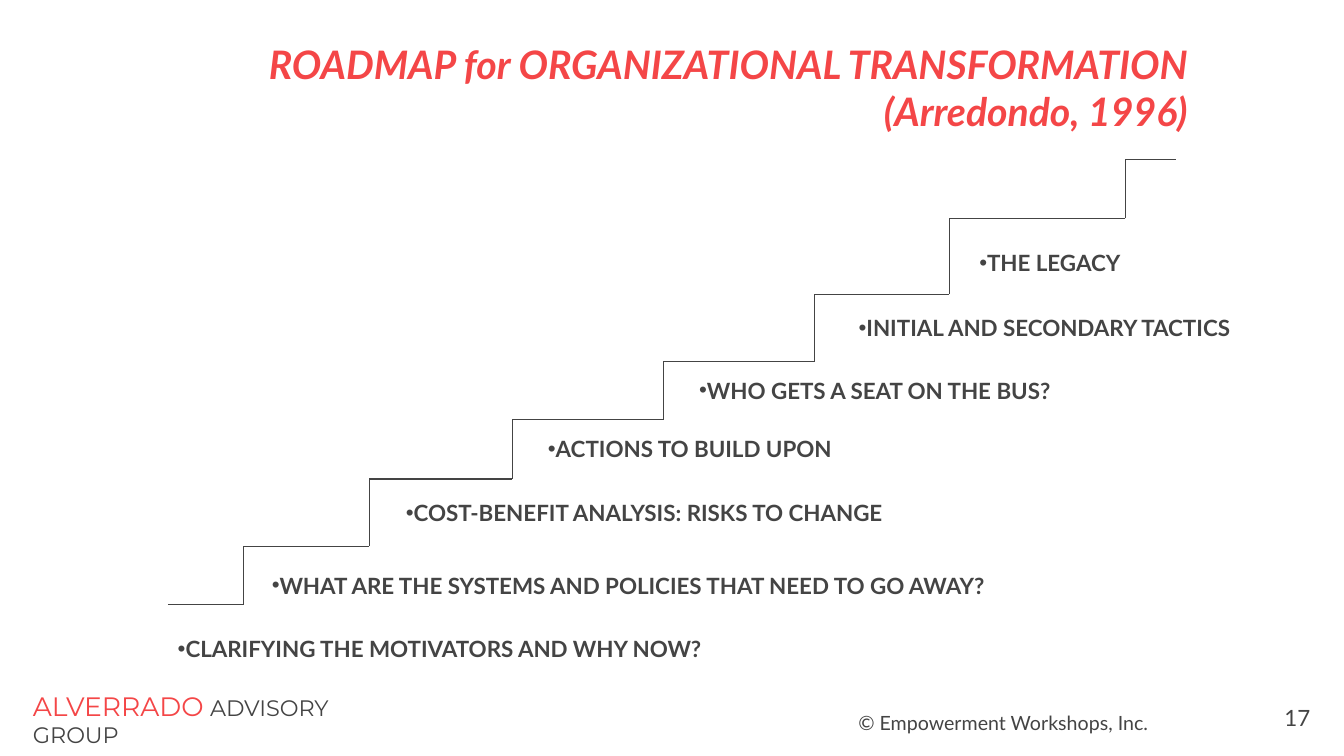
from collections import namedtuple
from dataclasses import dataclass
from itertools import pairwise

from lxml.etree import SubElement
from pptx import Presentation
from pptx.dml.color import RGBColor
from pptx.enum.shapes import MSO_CONNECTOR as Connector
from pptx.enum.text import MSO_ANCHOR as Anchor, MSO_AUTO_SIZE as AutoSize, PP_ALIGN as Align
from pptx.oxml.ns import qn
from pptx.util import Cm, Pt

Box = namedtuple("Box", "left top width height")
Step = namedtuple("Step", "tread rise label label_width offset_x offset_y")


@dataclass(frozen=True)
class Theme:
    red: RGBColor = RGBColor(0xF4, 0x46, 0x47)
    grey: RGBColor = RGBColor(0x44, 0x44, 0x44)
    body_font: str = "Lato"
    brand_font: str = "Montserrat"
    title_size: int = 28
    brand_size: int = 19
    gap_size: int = 18
    label_size: int = 16
    footer_size: int = 14
    line_width: float = 0.75


THEME = Theme()

# From the bottom step up, in centimetres: tread length, rise after it,
# label, label width, label offset from the left end of the tread.
STEPS = [
    Step(1.91, 1.48, "CLARIFYING THE MOTIVATORS AND WHY NOW?", 13.84, 0, 0.64),
    Step(3.17, 1.69, "WHAT ARE THE SYSTEMS AND POLICIES THAT NEED TO GO AWAY?",
         18.75, 0.46, 0.52),
    Step(3.6, 1.49, "COST-BENEFIT ANALYSIS: RISKS TO CHANGE", 12.8, 0.67, 0.38),
    Step(3.81, 1.48, "ACTIONS TO BUILD UPON", 7.87, 0.65, 0.27),
    Step(3.81, 1.69, "WHO GETS A SEAT ON THE BUS?", 9.53, 0.65, 0.27),
    Step(3.39, 1.91, "INITIAL AND SECONDARY TACTICS", 10.08, 0.86, 0.39),
    Step(4.44, 1.48, "THE LEGACY", 4.06, 0.51, 0.65),
]
TOP_LANDING = 1.27
LABEL_HEIGHT = 0.94


def add_text_box(page, box, wrap=True, align=Align.LEFT):
    """Add an empty text box and return its frame and first paragraph."""
    frame = page.shapes.add_textbox(*map(Cm, box)).text_frame
    frame.word_wrap = wrap
    frame.auto_size = AutoSize.NONE if wrap else AutoSize.SHAPE_TO_FIT_TEXT
    para = frame.paragraphs[0]
    para.alignment = align
    return frame, para


def add_span(para, text, size, color=THEME.grey, font=THEME.body_font, bold=False, italic=False):
    span = para.add_run()
    span.text = text
    span.font.size = Pt(size)
    span.font.name = font
    span.font.color.rgb = color
    span.font.bold = bold
    span.font.italic = italic


def add_bullet(para):
    properties = para._p.get_or_add_pPr()
    properties.set("marL", "0")
    properties.set("indent", "0")
    SubElement(properties, qn("a:buFont"), typeface="Arial")
    SubElement(properties, qn("a:buChar"), char="•")


def add_line(page, start, end):
    line = page.shapes.add_connector(Connector.STRAIGHT, *map(Cm, start + end))
    line.line.color.rgb = THEME.grey
    line.line.width = Pt(THEME.line_width)
    SubElement(line._element.spPr, qn("a:effectLst"))


def add_title(page, box):
    frame, para = add_text_box(page, box, align=Align.RIGHT)
    frame.vertical_anchor = Anchor.MIDDLE
    frame.margin_bottom = Cm(1.32)
    style = dict(size=THEME.title_size, color=THEME.red, bold=True, italic=True)
    add_span(para, "ROADMAP for ORGANIZATIONAL TRANSFORMATION", **style)
    para.add_line_break()
    add_span(para, "(Arredondo, 1996)", **style)


def add_staircase(page, box):
    """Climb from the bottom left of the box, with one label under each tread."""
    x, y = box.left, box.top + box.height
    corners = [(x, y)]
    for step in STEPS:
        label_box = Box(x + step.offset_x, y + step.offset_y, step.label_width, LABEL_HEIGHT)
        para = add_text_box(page, label_box, wrap=False)[1]
        add_bullet(para)
        add_span(para, step.label, THEME.label_size, bold=True)
        x += step.tread
        corners.append((x, y))
        y -= step.rise
        corners.append((x, y))
    corners.append((x + TOP_LANDING, y))
    for start, end in pairwise(corners):
        add_line(page, start, end)


def add_footer(page, box):
    brand_box = Box(box.left, box.top, 8.59, 1.27)
    para = add_text_box(page, brand_box)[1]
    add_span(para, "ALVERRADO", THEME.brand_size, THEME.red, THEME.brand_font)
    add_span(para, " ", THEME.gap_size)
    add_span(para, "ADVISORY GROUP", THEME.label_size, font=THEME.brand_font)

    copyright_box = Box(box.left + 20.8, box.top + 0.53, 8.36, 0.86)
    para = add_text_box(page, copyright_box)[1]
    add_span(para, "© Empowerment Workshops, Inc.", THEME.footer_size)

    number_width = 2.67
    number_box = Box(box.left + box.width - number_width, box.top + 0.38, number_width, 0.94)
    para = add_text_box(page, number_box, align=Align.RIGHT)[1]
    add_span(para, "17", THEME.label_size)


def main():
    deck = Presentation()
    deck.slide_width, deck.slide_height = Cm(33.87), Cm(19.05)
    page = deck.slides.add_slide(deck.slide_layouts[6])
    add_title(page, Box(3.66, 1.22, 26.52, 3.18))
    add_staircase(page, Box(4.23, 4.02, 25.4, 11.22))
    add_footer(page, Box(0.58, 17.25, 32.69, 1.4))
    deck.save("out.pptx")


if __name__ == "__main__":
    main()
